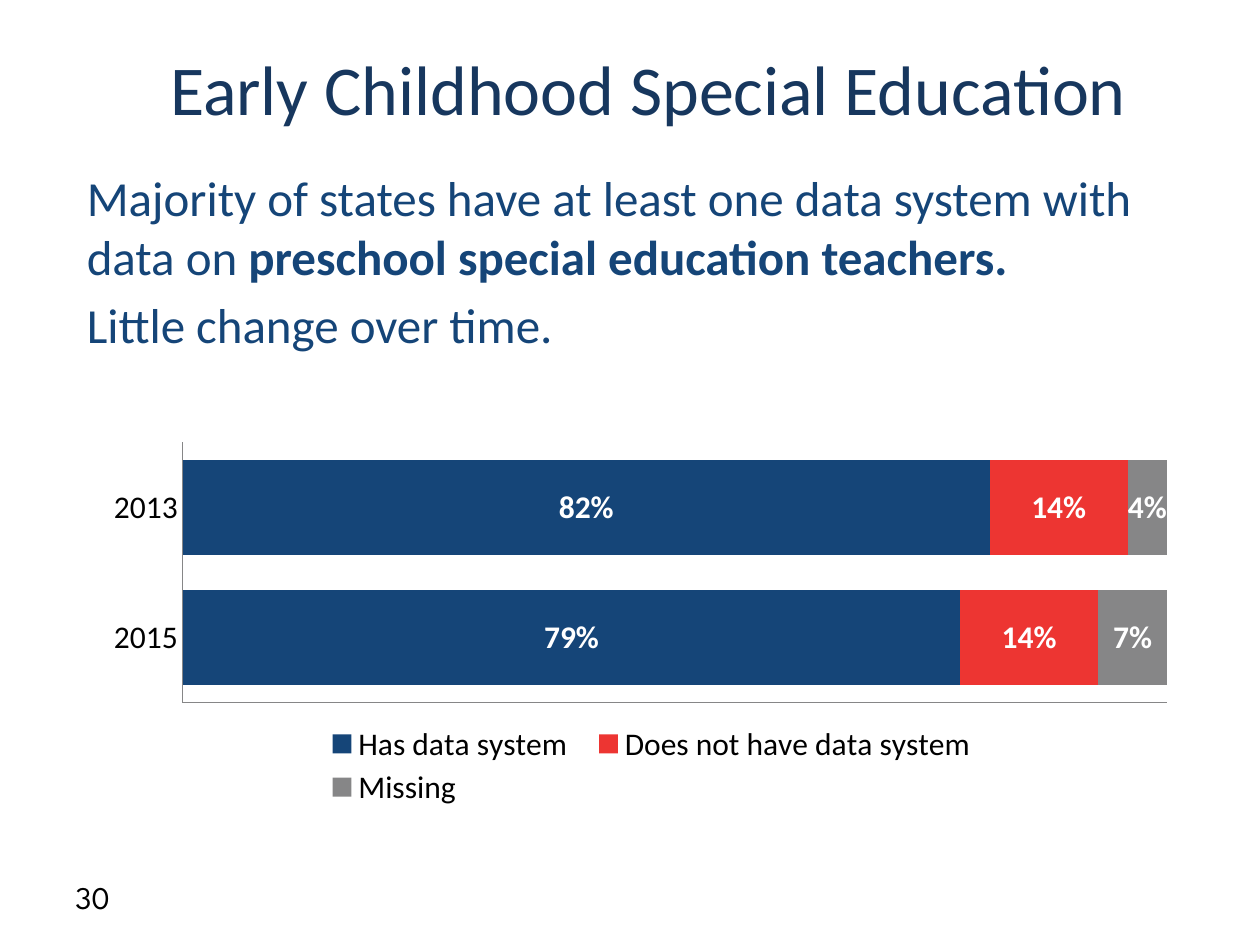
import pptx
import pptx.chart.data
import pptx.dml.color
import pptx.enum.chart
import pptx.enum.text
import pptx.oxml
import pptx.oxml.ns
import pptx.util
from pptx.util import Cm, Pt

RGBColor = pptx.dml.color.RGBColor
NAVY = RGBColor(0x17, 0x37, 0x5E)
BLUE = RGBColor(0x15, 0x45, 0x78)
RED = RGBColor(0xED, 0x35, 0x32)
GRAY = RGBColor(0x86, 0x86, 0x87)
BLACK = RGBColor(0, 0, 0)
WHITE = RGBColor(0xFF, 0xFF, 0xFF)


def add_text(slide, box, paragraphs, font, size, color):
    """Add a text box; each paragraph is a list of (text, bold) runs."""
    tf = slide.shapes.add_textbox(*[Cm(v) for v in box]).text_frame
    tf.word_wrap = True
    for i, runs in enumerate(paragraphs):
        p = tf.paragraphs[0] if i == 0 else tf.add_paragraph()
        p.font.name = font
        p.font.size = Pt(size)
        p.font.color.rgb = color
        for text, bold in runs:
            r = p.add_run()
            r.text = text
            if bold:
                r.font.bold = True
    return tf


def layout_xml(x, y, w, h, target=""):
    """Return a manual chart layout, in fractions of the chart."""
    return pptx.oxml.parse_xml(
        f'<c:layout {pptx.oxml.ns.nsdecls("c")}><c:manualLayout>{target}'
        '<c:xMode val="edge"/><c:yMode val="edge"/>'
        f'<c:x val="{x}"/><c:y val="{y}"/><c:w val="{w}"/><c:h val="{h}"/>'
        '</c:manualLayout></c:layout>')


prs = pptx.Presentation()
prs.slide_width, prs.slide_height = Cm(25.4), Cm(19.05)
s = prs.slides.add_slide(prs.slide_layouts[6])

# Slide number
tf = add_text(s, (1.27, 17.58, 5.92, 1.02), [[("30", False)]],
              "League Spartan", 18, BLACK)
tf.vertical_anchor = pptx.enum.text.MSO_ANCHOR.MIDDLE

# Share of states by year
data = pptx.chart.data.CategoryChartData(number_format="0%")
data.categories = ["2015", "2013"]
data.add_series("Has data system", (0.79, 0.82))
data.add_series("Does not have data system", (0.14, 0.14))
data.add_series("Missing", (0.07, 0.04))
chart = s.shapes.add_chart(
    pptx.enum.chart.XL_CHART_TYPE.BAR_STACKED,
    Cm(1.85), Cm(8.76), Cm(22.12), Cm(7.67), data).chart
chart.has_title = False
chart.font.name = "Calibri"
chart.font.size = Pt(18)
chart.font.color.rgb = BLACK

plot = chart.plots[0]
plot.gap_width = 37
plot.overlap = 100
plot.vary_by_categories = False
for series, color in zip(plot.series, (BLUE, RED, GRAY)):
    series.format.fill.solid()
    series.format.fill.fore_color.rgb = color
    labels = series.data_labels
    labels.show_value = True
    labels.number_format = "0%"
    labels.number_format_is_linked = False
    labels.font.name = "Calibri"
    labels.font.size = Pt(18)
    labels.font.bold = True
    labels.font.color.rgb = WHITE

for axis in (chart.category_axis, chart.value_axis):
    axis.has_major_gridlines = False
    axis.major_tick_mark = pptx.enum.chart.XL_TICK_MARK.NONE
    axis.minor_tick_mark = pptx.enum.chart.XL_TICK_MARK.NONE
    axis.format.line.color.rgb = GRAY
    axis.format.line.width = Pt(0.75)
axis = chart.value_axis
axis.minimum_scale, axis.maximum_scale, axis.major_unit = 0, 1, 0.2
axis.tick_labels.number_format = "0%"
axis.tick_labels.number_format_is_linked = False
axis.tick_label_position = pptx.enum.chart.XL_TICK_LABEL_POSITION.NONE

chart.has_legend = True
legend = chart.legend
legend.position = pptx.enum.chart.XL_LEGEND_POSITION.BOTTOM
legend.include_in_layout = False

plot_area = chart.element.find(".//" + pptx.oxml.ns.qn("c:plotArea"))
legend_el = chart.element.find(".//" + pptx.oxml.ns.qn("c:legend"))
for el in (plot_area, legend_el):
    for old in el.findall(pptx.oxml.ns.qn("c:layout")):
        el.remove(old)
plot_area.insert(0, layout_xml(0.083, 0.02, 0.897, 0.685,
                               '<c:layoutTarget val="inner"/>'))
legend_el.insert(1, layout_xml(0.2, 0.75, 0.62, 0.24))

# Findings
tf = add_text(s, (1.5, 3.25, 22.53, 4.09), [
    [("Majority of states have at least one data system with data on ", False),
     ("preschool special education teachers.", True)],
    [("Little change over time.", False)],
], "Calibri", 28, BLUE)
for p in tf.paragraphs:
    p.space_before = Pt(5.6)

# Title
add_text(s, (3.18, 0.79, 21.69, 1.96),
         [[("Early Childhood Special Education", False)]], "Calibri", 40, NAVY)

prs.save("out.pptx")
